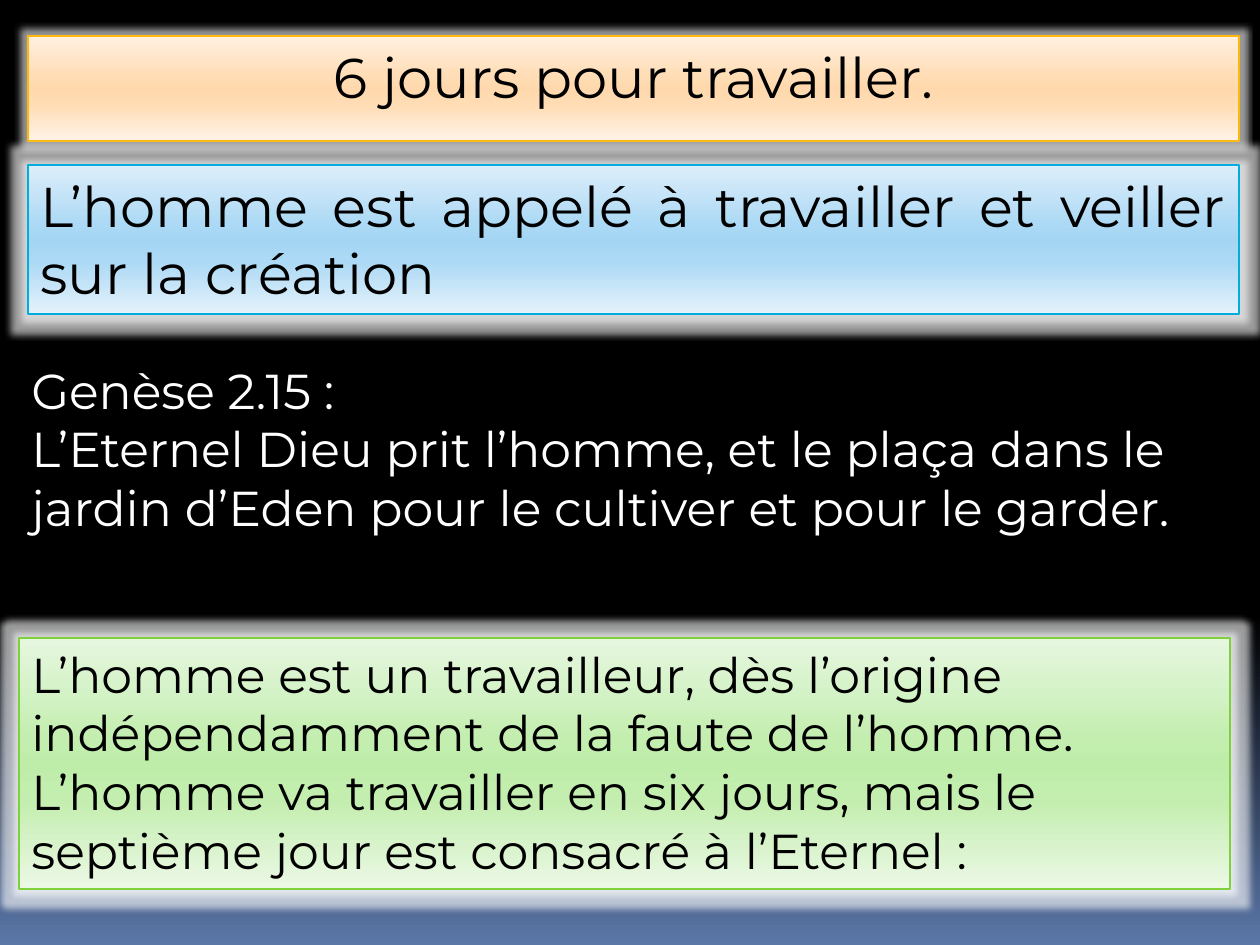
"""Build the slide about six days of work."""
from lxml import etree
from pptx import Presentation
from pptx.dml.color import RGBColor
from pptx.enum.shapes import MSO_SHAPE
from pptx.enum.text import MSO_ANCHOR, MSO_AUTO_SIZE, PP_ALIGN
from pptx.oxml.ns import qn
from pptx.util import Emu, Pt

RECTANGLE = MSO_SHAPE.RECTANGLE
TOP = MSO_ANCHOR.TOP
FIT_SHAPE = MSO_AUTO_SIZE.SHAPE_TO_FIT_TEXT
LEFT, CENTER, JUSTIFY = PP_ALIGN.LEFT, PP_ALIGN.CENTER, PP_ALIGN.JUSTIFY

PX_PER_INCH = 126
SLIDE_SIZE = (1260, 945)
PANEL_WIDTH = 1211
STOP_POSITIONS = (0, 40, 50, 65, 100)

THEME = {
    "font": "Montserrat",
    "large": 32,
    "medium": 28,
    "dark": "000000",
    "light": "FFFFFF",
    "line_width": 0.94,
    "glow": {"color": "FFFFFF", "radius": 13, "alpha": 60},
    "background": ((0, "000000"), (65, "000000"), (100, "5B77A8")),
    "orange": {"line": "FEB80A",
               "fill": ("FFF0E1", "FFDCB4", "FFD9AD", "FFDCB4", "FFF3E7")},
    "blue": {"line": "00ADDC",
             "fill": ("DEEEFA", "ACD9F5", "A4D6F4", "ACD9F5", "E5F2FB")},
    "green": {"line": "7FD13B",
              "fill": ("E6F7E0", "C4EEB0", "BEEDA9", "C4EEB0", "ECF8E6")},
}

PANELS = [
    {"kind": "title", "place": (28, 36, 81), "palette": "orange",
     "size": "large", "color": "dark", "align": CENTER,
     "paragraphs": ["6 jours pour travailler."]},
    {"kind": "box", "place": (28, 165, 149), "palette": "blue",
     "size": "large", "color": "dark", "align": JUSTIFY,
     "paragraphs": ["L’homme est appelé à travailler et veiller sur la création"]},
    {"kind": "text", "place": (19, 354, 251), "palette": None,
     "size": "medium", "color": "light", "align": LEFT,
     "paragraphs": ["Genèse 2.15 :",
                    "L’Eternel Dieu prit l’homme, et le plaça dans le jardin "
                    "d’Eden pour le cultiver et pour le garder."]},
    {"kind": "box", "place": (19, 638, 251), "palette": "green",
     "size": "medium", "color": "dark", "align": LEFT,
     "paragraphs": ["L’homme est un travailleur, dès l’origine indépendamment "
                    "de la faute de l’homme. L’homme va travailler en six jours, "
                    "mais le septième jour est consacré à l’Eternel :"]},
]


def px(length):
    return Emu(round(length * 914400 / PX_PER_INCH))


def add_color(parent, color, alpha=None):
    element = etree.SubElement(parent, qn("a:srgbClr"), val=color)
    if alpha is not None:
        etree.SubElement(element, qn("a:alpha"), val=str(alpha * 1000))


def paint_gradient(fill, owner, stops):
    fill.gradient()
    fill.gradient_angle = 270
    stop_list = next(owner.iter(qn("a:gsLst")))
    for stop in list(stop_list):
        stop_list.remove(stop)
    for position, color in stops:
        stop = etree.SubElement(stop_list, qn("a:gs"), pos=str(position * 1000))
        add_color(stop, color)


def add_glow(shape):
    shape.shadow.inherit = False
    effects = next(shape.element.iter(qn("a:effectLst")))
    glow = THEME["glow"]
    element = etree.SubElement(effects, qn("a:glow"), rad=str(px(glow["radius"])))
    add_color(element, glow["color"], glow["alpha"])


def create_shape(slide, panel):
    left, top, height = panel["place"]
    box = [px(value) for value in (left, top, PANEL_WIDTH, height)]
    if panel["kind"] == "text":
        return slide.shapes.add_textbox(*box)
    if panel["kind"] == "box":
        return slide.shapes.add_shape(RECTANGLE, *box)
    title = slide.shapes.title
    for name, value in zip(("left", "top", "width", "height"), box):
        setattr(title, name, value)
    return title


def decorate(shape, palette):
    paint_gradient(shape.fill, shape.element, zip(STOP_POSITIONS, palette["fill"]))
    shape.line.color.rgb = RGBColor.from_string(palette["line"])
    shape.line.width = Pt(THEME["line_width"])
    add_glow(shape)


def write_text(shape, panel):
    frame = shape.text_frame
    frame.text = "\n".join(panel["paragraphs"])
    frame_format = {"word_wrap": True, "auto_size": FIT_SHAPE, "vertical_anchor": TOP}
    for name, value in frame_format.items():
        setattr(frame, name, value)
    font_format = {"name": THEME["font"], "size": Pt(THEME[panel["size"]])}
    for paragraph in frame.paragraphs:
        paragraph.alignment = panel["align"]
        font = paragraph.runs[0].font
        for name, value in font_format.items():
            setattr(font, name, value)
        font.color.rgb = RGBColor.from_string(THEME[panel["color"]])


def main():
    presentation = Presentation()
    presentation.slide_width, presentation.slide_height = map(px, SLIDE_SIZE)
    slide = presentation.slides.add_slide(presentation.slide_layouts[5])
    paint_gradient(slide.background.fill, slide.element, THEME["background"])
    for panel in PANELS:
        shape = create_shape(slide, panel)
        if panel["palette"]:
            decorate(shape, THEME[panel["palette"]])
        write_text(shape, panel)
    presentation.save("out.pptx")


if __name__ == "__main__":
    main()
